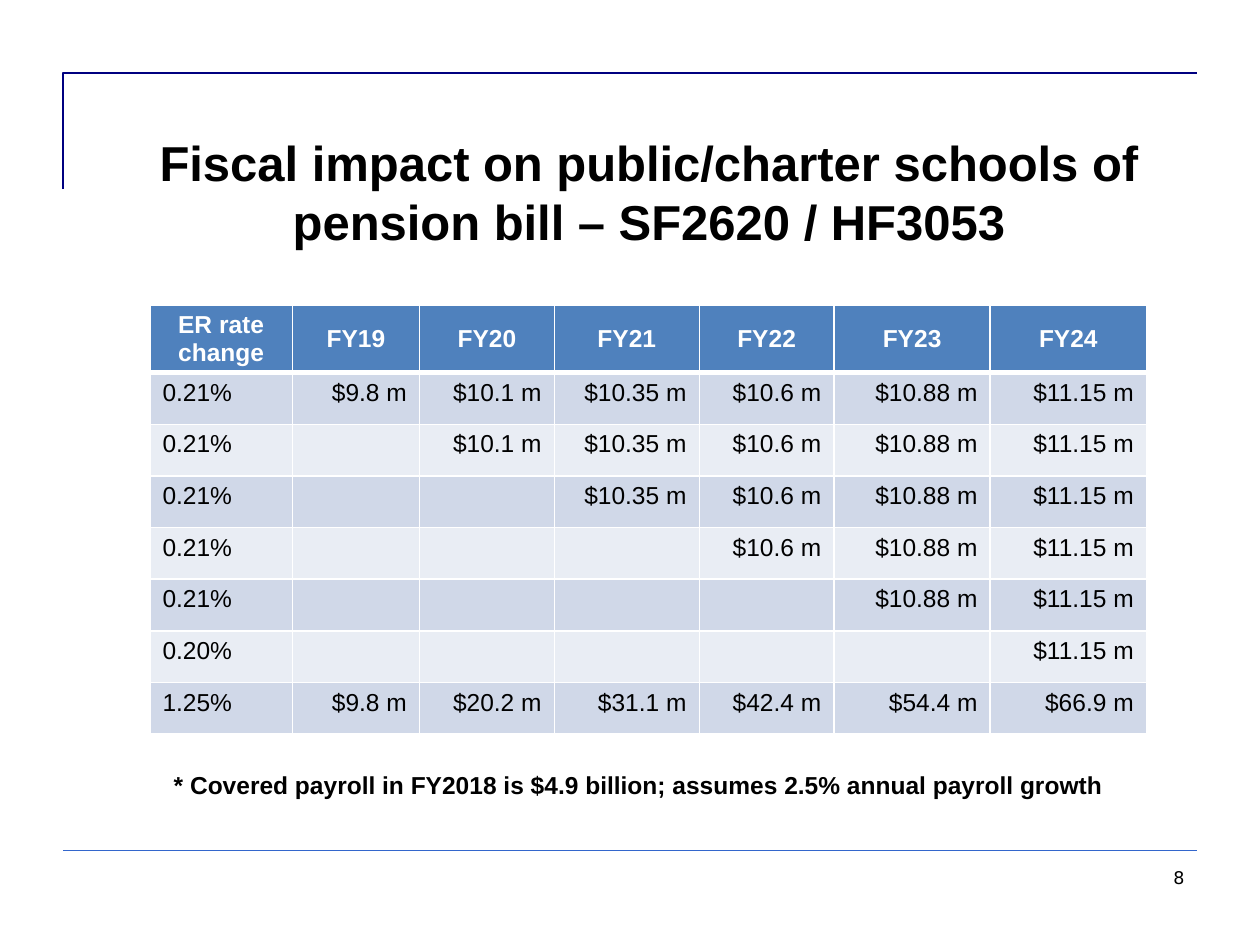
from lxml.etree import SubElement
from pptx import Presentation
from pptx.dml.color import RGBColor
from pptx.enum.shapes import MSO_CONNECTOR
from pptx.enum.text import MSO_ANCHOR, PP_ALIGN
from pptx.oxml.ns import qn
from pptx.util import Inches, Pt

TITLE = "Fiscal impact on public/charter schools of pension bill – SF2620 / HF3053"
NOTE = "* Covered payroll in FY2018 is $4.9 billion; assumes 2.5% annual payroll growth"
PAGE = "8"
HEAD = ["ER rate change", "FY19", "FY20", "FY21", "FY22", "FY23", "FY24"]
RATES = ["0.21%"] * 5 + ["0.20%"]
COSTS = ["$9.8 m", "$10.1 m", "$10.35 m", "$10.6 m", "$10.88 m", "$11.15 m"]
TOTAL = ["1.25%", "$9.8 m", "$20.2 m", "$31.1 m", "$42.4 m", "$54.4 m", "$66.9 m"]

# Each rate change starts one year later than the one above it
STEPS = [[rate] + [""] * i + COSTS[i:] for i, rate in enumerate(RATES)]
ROWS = [HEAD] + STEPS + [TOTAL]
COLS = [1.13, 1.01, 1.07, 1.15, 1.07, 1.24, 1.24]
ROW = 0.41

COLORS = {"navy": "000080", "rule": "3366CC", "head": "4F81BD", "odd": "D0D8E8",
          "even": "E9EDF4", "black": "000000", "white": "FFFFFF"}
LEFT, RIGHT, TOP, BASE = 0.5, 9.5, 0.58, 6.75


def color(name):
    return RGBColor.from_string(COLORS[name])


def write(frame, text, size, align, bold=False, ink="black", face="Arial"):
    frame.word_wrap = True
    para = frame.paragraphs[0]
    para.alignment = align
    run = para.add_run()
    run.text = text
    font = run.font
    font.name, font.size, font.bold = face, Pt(size), bold
    font.color.rgb = color(ink)


def add_text(slide, box, *args, **style):
    shape = slide.shapes.add_textbox(*map(Inches, box))
    write(shape.text_frame, *args, **style)


def edge(cell, side, width):
    line = SubElement(cell._tc.get_or_add_tcPr(), qn("a:ln" + side), w=str(Pt(width)))
    fill = SubElement(line, qn("a:solidFill"))
    SubElement(fill, qn("a:srgbClr"), val=COLORS["white"])


def add_frame(slide):
    pen = slide.shapes.build_freeform(Inches(LEFT), Inches(1.5))
    pen.add_line_segments([(Inches(LEFT), Inches(TOP)), (Inches(RIGHT), Inches(TOP))],
                          close=False)
    corner = pen.convert_to_shape()
    corner.shadow.inherit = False
    corner.fill.background()
    corner.line.color.rgb = color("navy")
    corner.line.width = Pt(1.5)

    rule = slide.shapes.add_connector(MSO_CONNECTOR.STRAIGHT, Inches(LEFT), Inches(BASE),
                                      Inches(RIGHT), Inches(BASE))
    rule.line.color.rgb = color("rule")
    rule.line.width = Pt(0.25)
    SubElement(rule._element.spPr, qn("a:effectLst"))


def add_costs(slide):
    table = slide.shapes.add_table(len(ROWS), len(COLS), Inches(1.19), Inches(2.42),
                                   Inches(sum(COLS)), Inches(ROW * len(ROWS))).table
    for col, width in zip(table.columns, COLS):
        col.width = Inches(width)
    for r, texts in enumerate(ROWS):
        table.rows[r].height = Inches(ROW)
        head = r == 0
        for c, text in enumerate(texts):
            cell = table.cell(r, c)
            for side in "LRTB":
                thick = (r, side) in [(0, "B"), (1, "T")]
                edge(cell, side, 3 if thick else 1)
            cell.fill.solid()
            cell.fill.fore_color.rgb = color("head" if head else "odd" if r % 2 else "even")
            if head:
                cell.vertical_anchor = MSO_ANCHOR.MIDDLE
                write(cell.text_frame, text, 14, PP_ALIGN.CENTER, True, "white")
            elif text:
                write(cell.text_frame, text, 14, PP_ALIGN.RIGHT if c else PP_ALIGN.LEFT)


def main():
    deck = Presentation()
    deck.slide_width, deck.slide_height = Inches(10), Inches(7.5)
    slide = deck.slides.add_slide(deck.slide_layouts[5])
    add_frame(slide)

    title = slide.shapes.title
    title.left, title.top, title.width, title.height = map(Inches, (0.69, 1, 8.92, 1.04))
    title.text_frame.vertical_anchor = MSO_ANCHOR.MIDDLE
    write(title.text_frame, TITLE, 28, PP_ALIGN.CENTER, True)

    add_costs(slide)
    add_text(slide, (1.28, 6.06, 7.75, 0.34), NOTE, 14, PP_ALIGN.LEFT, bold=True)
    add_text(slide, (7.17, 6.83, 2.33, 0.5), PAGE, 10, PP_ALIGN.RIGHT, face="DejaVu Sans")
    deck.save("out.pptx")


if __name__ == "__main__":
    main()
